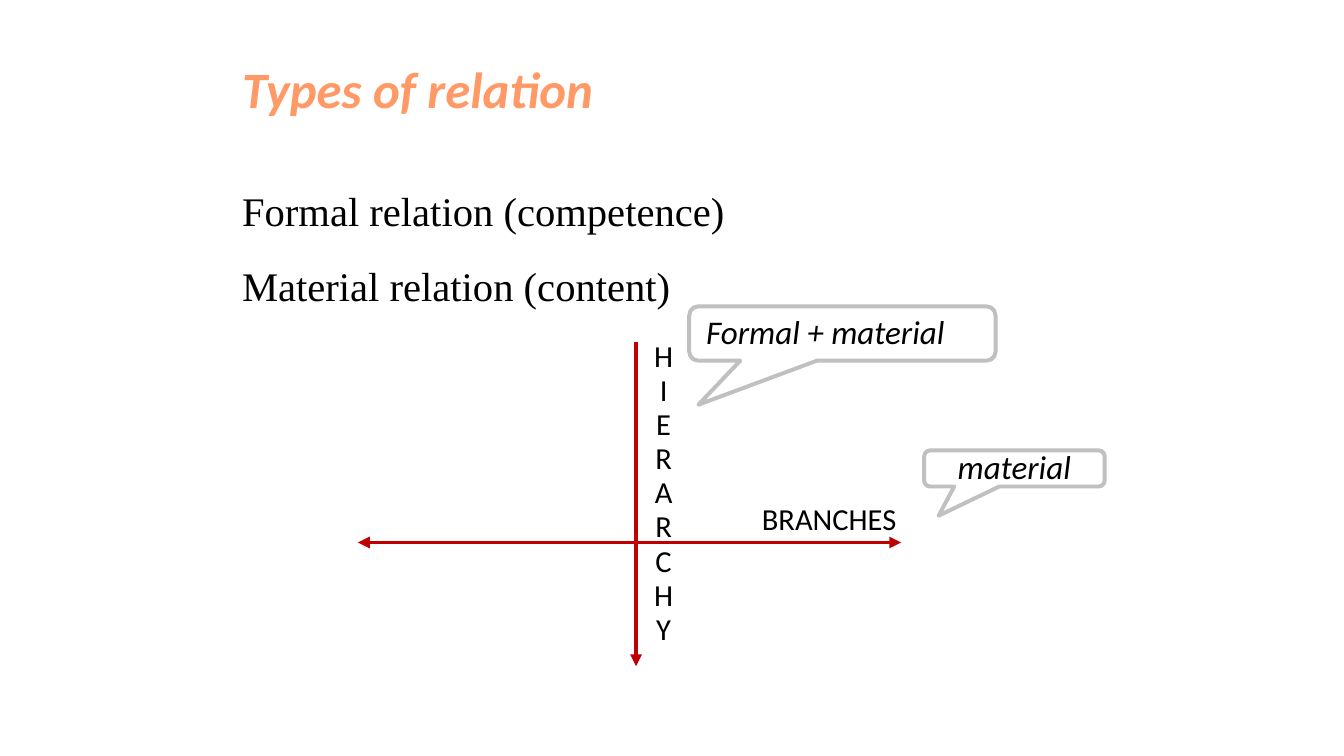
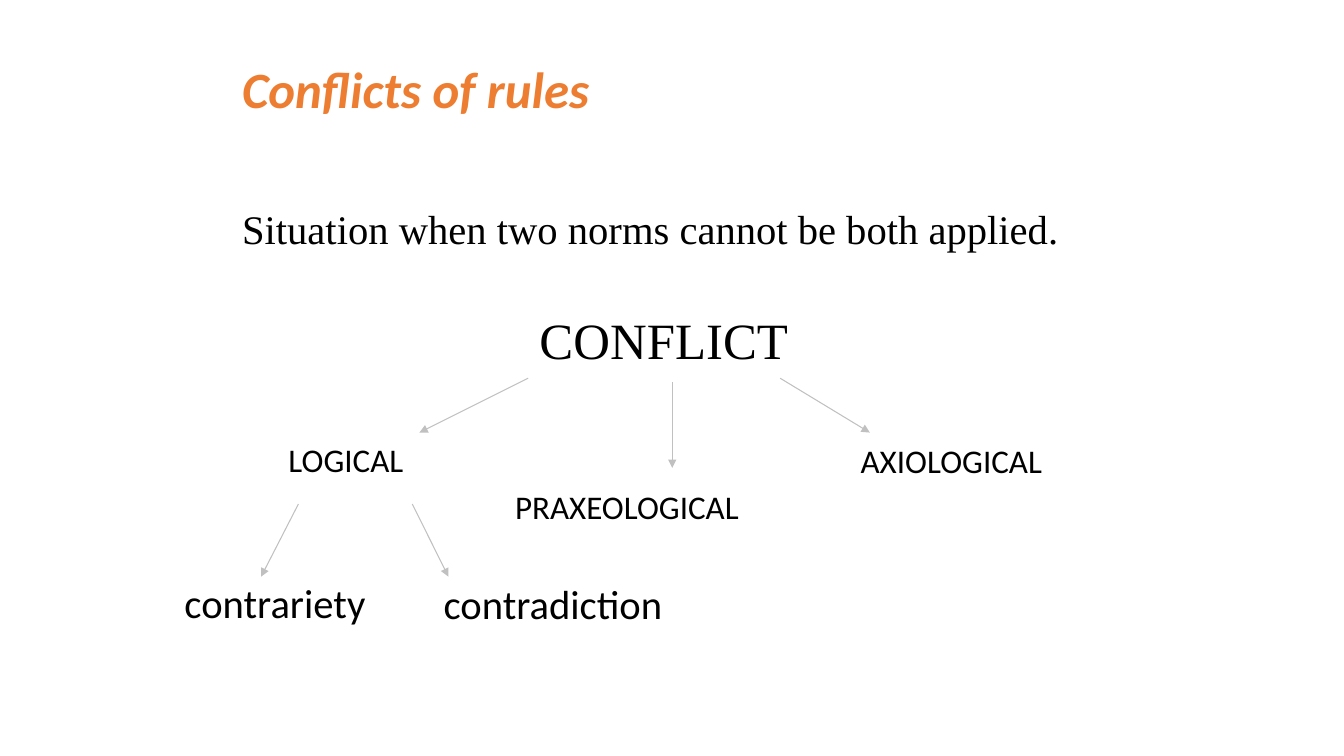
from lxml.etree import SubElement
from pptx import Presentation
from pptx.dml.color import RGBColor
from pptx.enum.shapes import MSO_CONNECTOR as Link, MSO_SHAPE as Shape
from pptx.enum.text import MSO_ANCHOR as Anchor, MSO_AUTO_SIZE as Fit, PP_ALIGN as Align
from pptx.oxml.ns import qn
from pptx.util import Cm, Pt

BLACK, RED, GRAY = "000000", "C00000", "C0C0C0"
SANS, SERIF = "Calibri", "Times New Roman"
LEFT = 6.1


def color(code):
    return RGBColor.from_string(code)


def place(shape, x, y, w, h):
    shape.left, shape.top, shape.width, shape.height = map(Cm, (x, y, w, h))


def frame(shape, pad=(0, 0), anchor=Anchor.MIDDLE):
    box = shape.text_frame
    box.word_wrap = True
    box.auto_size = Fit.NONE
    box.vertical_anchor = anchor
    box.margin_left = box.margin_right = Cm(pad[0])
    box.margin_top = box.margin_bottom = Cm(pad[1])
    return box


def style(para, size, font=SANS, code=BLACK, bold=False, italic=False,
          align=Align.LEFT, space=0.93, before=0):
    para.alignment = align
    para.line_spacing = space
    para.space_before = Pt(before)
    for run in para.runs:
        face = run.font
        face.name, face.size = font, Pt(size)
        face.bold, face.italic = bold, italic
        face.color.rgb = color(code)


def start(deck, title, code):
    """Add a slide with its styled title."""
    slide = deck.slides.add_slide(deck.slide_layouts[1])
    head = slide.shapes.title
    place(head, LEFT, 0.81, 21.69, 2.97)
    box = frame(head)
    box.text = title
    style(box.paragraphs[0], 36.3, code=code, bold=True, italic=True)
    return slide


def body(slide, y, w, lines):
    """Fill the body with (text, size, format) lines, without bullets."""
    hold = slide.placeholders[1]
    place(hold, LEFT, y, w, 4.47)
    box = frame(hold)
    box.text = "\n".join(line[0] for line in lines)
    for para, (_, size, form) in zip(box.paragraphs, lines):
        props = para._p.get_or_add_pPr()
        props.set("marL", "0")
        props.set("indent", "0")
        SubElement(props, qn("a:buNone"))
        style(para, size, SERIF, **form)


def label(slide, text, spot, size, pad=(0.23, 0.1), align=Align.LEFT):
    shape = slide.shapes.add_textbox(*map(Cm, spot))
    box = frame(shape, pad, Anchor.TOP)
    box.text = text
    for para in box.paragraphs:
        style(para, size, align=align)


def arrow(slide, begin, end, code=GRAY, width=0.75, both=False):
    link = slide.shapes.add_connector(Link.STRAIGHT, *map(Cm, begin + end))
    link.line.color.rgb = color(code)
    link.line.width = Pt(width)
    props = link.line._get_or_add_ln()
    for tip in ("a:headEnd", "a:tailEnd") if both else ("a:tailEnd",):
        SubElement(props, qn(tip), type="triangle")
    SubElement(link._element.spPr, qn("a:effectLst"))


def callout(slide, text, spot, tip, pad, align):
    shape = slide.shapes.add_shape(Shape.ROUNDED_RECTANGULAR_CALLOUT, *map(Cm, spot))
    shape.shadow.inherit = False
    shape.adjustments[0], shape.adjustments[1] = tip
    shape.fill.background()
    shape.line.color.rgb = color(GRAY)
    shape.line.width = Pt(2.83)
    box = frame(shape, (pad, 0))
    box.text = text
    style(box.paragraphs[0], 23.6, italic=True, align=align)


def types(deck):
    slide = start(deck, "Types of relation", "FF9966")
    body(slide, 4.06, 22.1, [
        ("Formal relation (competence)", 29, {"space": 0.95}),
        ("Material relation (content)", 29, {"space": 1.43, "before": 3}),
    ])
    arrow(slide, (16.03, 8.61), (16.03, 16.79), RED, 2.83)
    arrow(slide, (9.02, 13.67), (22.71, 13.67), RED, 2.83, both=True)
    pad = (0.28, 0.15)
    label(slide, "\n".join("HIERARCHY"), (16.05, 8.43, 1.35, 8.03), 21.8, pad, Align.CENTER)
    label(slide, "BRANCHES", (18.92, 12.52, 4.8, 1.17), 21.8, pad)
    callout(slide, "Formal + material", (17.37, 7.72, 7.72, 1.37), (-0.47, 1.31),
            0.36, Align.LEFT)
    callout(slide, "material", (23.29, 11.35, 4.55, 0.91), (-0.42, 1.31),
            0.28, Align.CENTER)


def conflicts(deck):
    slide = start(deck, "Conflicts of rules", "ED7D31")
    body(slide, 5.05, 21.26, [
        ("Situation when two norms cannot be both applied.", 29, {"space": 0.95}),
        ("CONFLICT", 36.3, {"space": 0.95, "before": 42, "align": Align.CENTER}),
    ])
    for text, x, y, w, size in (
        ("LOGICAL", 7.04, 11.07, 4.06, 23.6),
        ("PRAXEOLOGICAL", 12.75, 12.24, 7.54, 23.6),
        ("AXIOLOGICAL", 21.46, 11.1, 6.07, 23.6),
        ("contrariety", 4.42, 14.58, 5.1, 29),
        ("contradiction", 10.95, 14.6, 6.25, 29),
    ):
        label(slide, text, (x, y, w, size / 20), size)
    for begin, end in (
        ((13.31, 9.53), (10.57, 10.9)),
        ((16.94, 9.63), (16.94, 11.79)),
        ((19.66, 9.53), (21.92, 10.9)),
        ((7.52, 12.7), (6.58, 14.53)),
        ((10.39, 12.7), (11.3, 14.53)),
    ):
        arrow(slide, begin, end)


def main():
    deck = Presentation()
    deck.slide_width, deck.slide_height = Cm(33.87), Cm(19.05)
    types(deck)
    conflicts(deck)
    deck.save("out.pptx")


if __name__ == "__main__":
    main()
